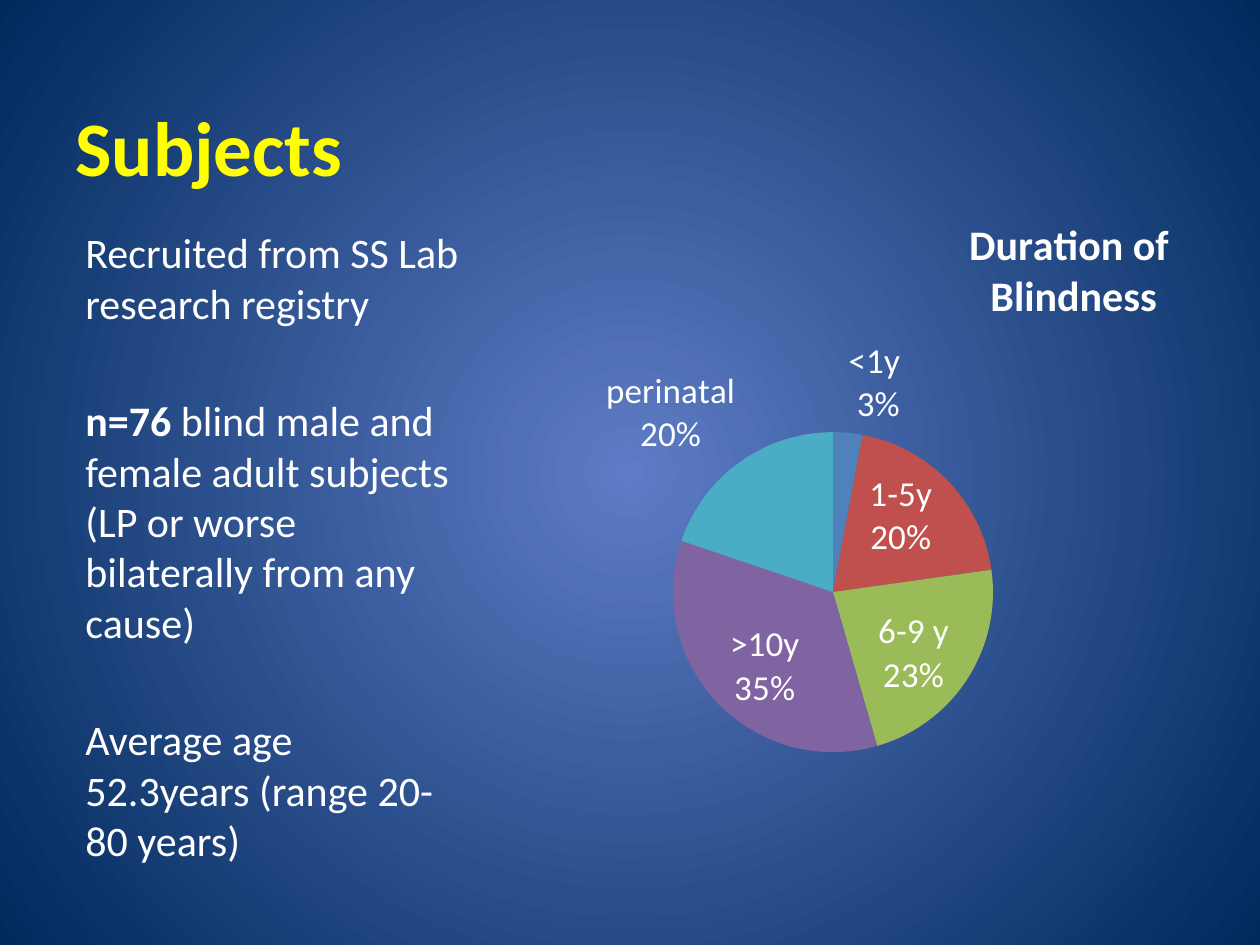
import pptx
import pptx.util
import pptx.dml.color
import pptx.chart.data
import pptx.enum.chart
import pptx.enum.text
import pptx.oxml.ns

Inches = pptx.util.Inches
Pt = pptx.util.Pt
qn = pptx.oxml.ns.qn

HUES = {
    "glow": "5E7CC5", "navy": "00295C", "title": "FFFF00", "text": "FFFFFF",
    "blue": "4F81BD", "red": "C0504D", "green": "9BBB59",
    "purple": "8064A2", "teal": "4BACC6",
}
SLICES = [("<1y ", 3, "blue"), ("1-5y", 20, "red"), ("6-9 y", 23, "green"),
          (">10y", 35, "purple"), ("perinatal", 20, "teal")]
BODY = [
    [("Recruited from SS Lab research registry", False)],
    [("n=76", True),
     (" blind male and female adult subjects (LP or worse bilaterally "
      "from any cause)", False)],
    [("Average age 52.3years (range 20-80 years)", False)],
]


def child(parent, tag, **attrs):
    node = parent.makeelement(qn(tag), attrs)
    parent.append(node)
    return node


def place(node, index, inner=False, **spots):
    for old in node.findall(qn("c:layout")):
        node.remove(old)
    layout = node.makeelement(qn("c:layout"), {})
    node.insert(index, layout)
    manual = child(layout, "c:manualLayout")
    if inner:
        child(manual, "c:layoutTarget", val="inner")
    for key in ("x", "y"):
        child(manual, f"c:{key}Mode", val="edge")
    for key, spot in spots.items():
        child(manual, f"c:{key}", val=str(spot))


class Deck:
    """Holds the style and the current slide."""

    def __init__(self, face="Calibri"):
        self.face = face
        self.file = pptx.Presentation()
        self.file.slide_width = Inches(10)
        self.file.slide_height = Inches(7.5)
        self.slide = self.file.slides.add_slide(self.file.slide_layouts[6])

    def hue(self, name):
        return pptx.dml.color.RGBColor.from_string(HUES[name])

    def style(self, font, size, name="text", bold=False):
        font.name = self.face
        font.size = Pt(size)
        font.bold = bold
        font.color.rgb = self.hue(name)

    def back(self, *names):
        fill = self.slide.background.fill
        fill.gradient()
        for stop, name in zip(fill.gradient_stops, names):
            stop.color.rgb = self.hue(name)
        grad = self.slide.element.find(".//" + qn("a:gradFill"))
        lin = grad.find(qn("a:lin"))
        ring = grad.makeelement(qn("a:path"), {"path": "circle"})
        child(ring, "a:fillToRect", **dict.fromkeys("ltrb", "50000"))
        grad.replace(lin, ring)

    def text(self, box, paras, size, name="text", gap=0, low=False):
        frame = self.slide.shapes.add_textbox(*map(Inches, box)).text_frame
        frame.word_wrap = True
        if low:
            frame.vertical_anchor = pptx.enum.text.MSO_ANCHOR.BOTTOM
        for index, runs in enumerate(paras):
            para = frame.add_paragraph() if index else frame.paragraphs[0]
            if index:
                para.space_before = Pt(gap)
            for words, bold in runs:
                run = para.add_run()
                run.text = words
                self.style(run.font, size, name, bold)

    def pie(self, box, slices, title):
        kinds = pptx.enum.chart
        names, nums, hues = zip(*slices)
        data = pptx.chart.data.CategoryChartData()
        data.categories = names
        data.add_series("Series 1", nums)
        chart = self.slide.shapes.add_chart(
            kinds.XL_CHART_TYPE.PIE, *map(Inches, box), data).chart
        self.style(chart.font, 10)
        chart.has_legend = False
        chart.has_title = True
        frame = chart.chart_title.text_frame
        frame.text = title
        for para in frame.paragraphs:
            for run in para.runs:
                self.style(run.font, 24, bold=True)
        place(chart.chart_title.element, 1, x=0.7, y=0.04)
        area = chart.element.find(".//" + qn("c:plotArea"))
        place(area, 0, True, x=0.3, y=0.38, w=0.44, h=0.5)

        plot = chart.plots[0]
        plot.vary_by_categories = True
        series = plot.series[0]
        for index, name in enumerate(hues):
            fill = series.points[index].format.fill
            fill.solid()
            fill.fore_color.rgb = self.hue(name)
        labels = series.data_labels
        self.style(labels.font, 20)
        labels.show_value = False
        labels.show_category_name = True
        labels.show_percentage = True
        labels.number_format = "0%"
        labels.number_format_is_linked = False
        labels.position = kinds.XL_LABEL_POSITION.BEST_FIT
        bubble = area.find(".//" + qn("c:showBubbleSize"))
        split = bubble.makeelement(qn("c:separator"), {})
        split.text = "\n"
        bubble.addnext(split)


def main():
    deck = Deck()
    deck.back("glow", "navy")
    deck.text((0.5, 0.3, 3.29, 1.27), [[("Subjects", True)]], 44, "title",
              low=True)
    deck.text((0.58, 1.75, 3.17, 4.92), BODY, 24, gap=38.4)
    deck.pie((3.58, 1.5, 5.83, 5.08), SLICES, "Duration of \nBlindness")
    deck.file.save("out.pptx")


if __name__ == "__main__":
    main()
